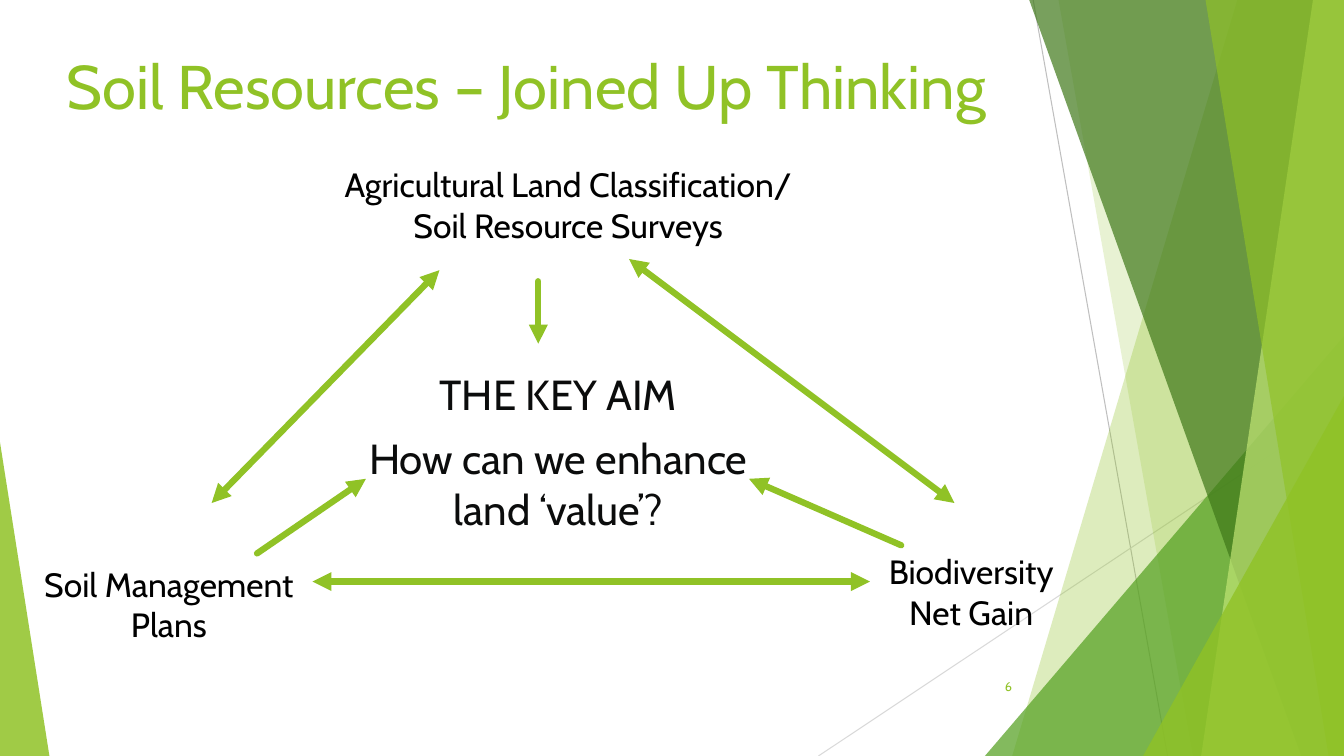
from dataclasses import dataclass

import lxml.etree
import pptx
import pptx.dml.color
import pptx.enum.shapes
import pptx.enum.text
import pptx.oxml.ns
import pptx.util

Pt = pptx.util.Pt
Align = pptx.enum.text.PP_ALIGN
Anchor = pptx.enum.text.MSO_ANCHOR
Point = tuple[float, float]

FONT = "Cabin"
WIDTH, HEIGHT = 960, 540
TOP = -0.6
COLOURS = {
    "lime": "90C226", "green": "54A021", "forest": "3F7819", "pale": "C0E474",
    "ink": "0B0C0C", "black": "000000", "grey": "BFBFBF", "light": "D9D9D9",
}


@dataclass
class Facet:
    """A translucent panel; opacity is in percent."""
    corners: list[Point]
    colour: str
    opacity: int


@dataclass
class Triangle:
    """A right-angled panel on the bottom edge; apex is 0 (left) or 1 (right)."""
    left: float
    top: float
    width: float
    apex: int
    colour: str
    opacity: int


@dataclass
class Line:
    start: Point
    end: Point
    colour: str = "lime"
    weight: float = 4.5
    start_arrow: bool = False
    end_arrow: bool = True


@dataclass
class Text:
    left: float
    top: float
    width: float
    height: float
    lines: list[str]
    size: float
    colour: str
    aligns: list[Align]
    anchor: Anchor = Anchor.MIDDLE
    wrap: bool = True
    gap: float = 0
    bottom_inset: float = 3.6


def label(left: float, top: float, width: float, first: str, second: str) -> Text:
    return Text(left, top, width, 65.5, [first, second], 24, "black",
                [Align.LEFT, Align.CENTER], Anchor.TOP, wrap=False)


def right_facet(top_x: float, bottom_x: float, colour: str, opacity: int) -> Facet:
    """A panel that reaches the right edge of the slide."""
    corners = [(top_x, TOP), (WIDTH, TOP), (WIDTH, HEIGHT), (bottom_x, HEIGHT)]
    return Facet(corners, colour, opacity)


BACKDROP = [
    Line((738, 0), (834, HEIGHT), "grey", 0.75, end_arrow=False),
    Line((WIDTH, 290), (584.6, HEIGHT), "light", 0.75, end_arrow=False),
    right_facet(884, 723, "lime", 30),
    right_facet(756, 852, "lime", 20),
    Triangle(703.5, 240, 256.5, 1, "green", 72),
    right_facet(735, 929.5, "forest", 70),
    right_facet(938, 858, "pale", 70),
    right_facet(861, 949, "lime", 65),
    Triangle(816.5, 283, 143.5, 1, "lime", 80),
    Triangle(0, 316, 35.3, 0, "lime", 85),
]
TEXTS = [
    Text(40.3, 22.3, 717, 76.3, ["Soil Resources – Joined Up Thinking"], 44, "lime", [Align.LEFT]),
    Text(226, 270, 345.6, 124, ["THE KEY AIM", "How can we enhance land ‘value’?"],
         30, "ink", [Align.CENTER] * 2, gap=10, bottom_inset=23),
    label(239, 113.8, 365.8, "Agricultural Land Classification/", "Soil Resource Surveys"),
    label(24.5, 398.9, 198, "Soil Management", "Plans"),
    label(627.8, 390.2, 141.8, "Biodiversity", "Net Gain"),
]
ARROWS = [
    Line((151.2, 359.3), (313.9, 193), start_arrow=True),
    Line((449.3, 185), (681.8, 359.3), start_arrow=True),
    Line((223.2, 415.4), (621.4, 415.4), start_arrow=True),
    Line((183.6, 395.3), (261.4, 342)),
    Line((643.7, 389.5), (535, 342)),
    Line((384.5, 200.9), (384.5, 245.5)),
]
PAGE_NUMBER = Text(676, 476, 54, 28.8, ["6"], 9, "lime", [Align.RIGHT])


def rgb(name: str) -> pptx.dml.color.RGBColor:
    return pptx.dml.color.RGBColor.from_string(COLOURS[name])


def add_element(parent, tag: str, **attributes: str):
    return lxml.etree.SubElement(parent, pptx.oxml.ns.qn(tag), attributes)


def paint(shape, colour: str, opacity: int) -> None:
    shape.shadow.inherit = False
    shape.line.fill.background()
    shape.fill.solid()
    shape.fill.fore_color.rgb = rgb(colour)
    tint = shape.element.spPr.find(".//" + pptx.oxml.ns.qn("a:srgbClr"))
    add_element(tint, "a:alpha", val=str(opacity * 1000))


def draw_facet(page, facet: Facet) -> None:
    corners = [(Pt(x), Pt(y)) for x, y in facet.corners]
    builder = page.shapes.build_freeform(*corners[0], scale=1.0)
    builder.add_line_segments(corners[1:], close=True)
    paint(builder.convert_to_shape(), facet.colour, facet.opacity)


def draw_triangle(page, triangle: Triangle) -> None:
    shape = page.shapes.add_shape(
        pptx.enum.shapes.MSO_SHAPE.ISOSCELES_TRIANGLE, Pt(triangle.left), Pt(triangle.top),
        Pt(triangle.width), Pt(HEIGHT - triangle.top))
    shape.adjustments[0] = triangle.apex
    paint(shape, triangle.colour, triangle.opacity)


def draw_line(page, line: Line) -> None:
    connector = page.shapes.add_connector(
        pptx.enum.shapes.MSO_CONNECTOR.STRAIGHT, *map(Pt, line.start + line.end))
    connector.line.width = Pt(line.weight)
    connector.line.color.rgb = rgb(line.colour)
    properties = connector.element.spPr
    stroke = properties.find(pptx.oxml.ns.qn("a:ln"))
    if line.end_arrow:
        stroke.set("cap", "rnd")
    if line.start_arrow:
        add_element(stroke, "a:headEnd", type="triangle")
    if line.end_arrow:
        add_element(stroke, "a:tailEnd", type="triangle")
    add_element(properties, "a:effectLst")


def draw_text(page, text: Text) -> None:
    box = page.shapes.add_textbox(Pt(text.left), Pt(text.top), Pt(text.width), Pt(text.height))
    frame = box.text_frame
    frame.word_wrap = text.wrap
    frame.vertical_anchor = text.anchor
    frame.margin_bottom = Pt(text.bottom_inset)
    if not text.wrap:
        frame.auto_size = pptx.enum.text.MSO_AUTO_SIZE.SHAPE_TO_FIT_TEXT
    for index, (words, align) in enumerate(zip(text.lines, text.aligns)):
        para = frame.add_paragraph() if index else frame.paragraphs[0]
        para.alignment = align
        if index and text.gap:
            para.space_before = Pt(text.gap)
        span = para.add_run()
        span.text = words
        span.font.name = FONT
        span.font.size = Pt(text.size)
        span.font.color.rgb = rgb(text.colour)


DRAW = {Facet: draw_facet, Triangle: draw_triangle, Line: draw_line, Text: draw_text}


def main() -> None:
    deck = pptx.Presentation()
    deck.slide_width, deck.slide_height = Pt(WIDTH), Pt(HEIGHT)
    page = deck.slides.add_slide(deck.slide_layouts[6])
    for item in [*BACKDROP, *TEXTS, *ARROWS, PAGE_NUMBER]:
        DRAW[type(item)](page, item)
    deck.save("out.pptx")


if __name__ == "__main__":
    main()
